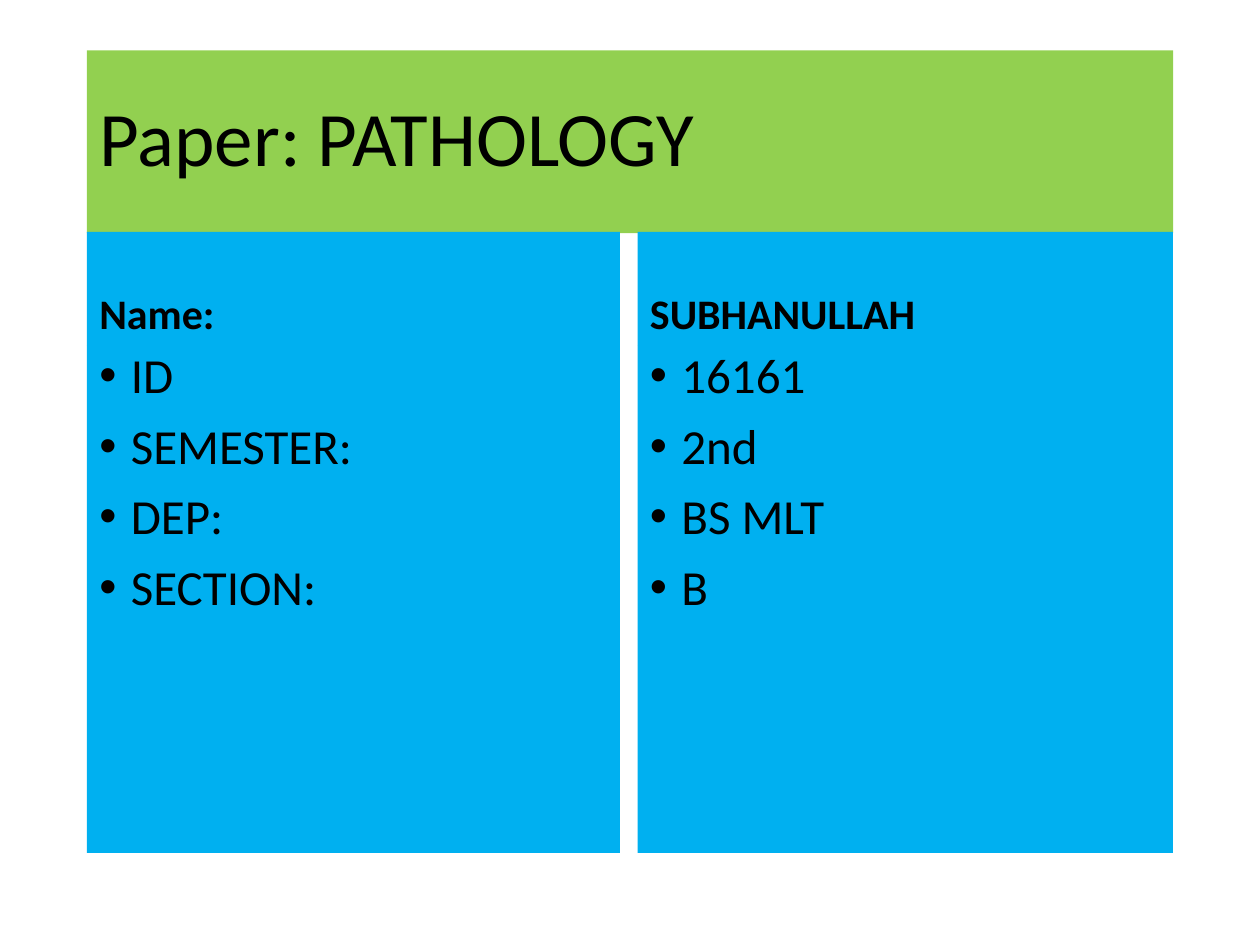
from dataclasses import dataclass

from lxml.etree import SubElement
from pptx import Presentation
from pptx.dml.color import RGBColor
from pptx.enum.text import MSO_ANCHOR as Anchor, MSO_AUTO_SIZE as AutoSize, PP_ALIGN as Align
from pptx.oxml.ns import qn
from pptx.util import Inches, Pt

FONT = "Calibri"
BLACK, GREEN, BLUE = "000000", "92D050", "00B0F0"
LEFT, RIGHT = 0.69, 9.31
TITLE_TOP, TITLE_HEIGHT = 0.4, 1.45
HEADING_TOP, LIST_TOP, BOTTOM = 1.84, 2.74, 6.77
INDENT = 0.25


@dataclass
class Column:
    left: float
    right: float
    heading: str
    items: list[str]


COLUMNS = [
    Column(LEFT, 4.92, "Name:", ["ID", "SEMESTER:", "DEP:", "SECTION:"]),
    Column(5.06, RIGHT, "SUBHANULLAH", ["16161", "2nd", "BS MLT", "B"]),
]


def color(value: str) -> RGBColor:
    return RGBColor.from_string(value)


def add_bullet(paragraph) -> None:
    properties = paragraph._p.get_or_add_pPr()
    properties.set("marL", str(Inches(INDENT)))
    properties.set("indent", str(-Inches(INDENT)))
    SubElement(properties, qn("a:buFont")).set("typeface", "Arial")
    SubElement(properties, qn("a:buChar")).set("char", "•")


def fill_panel(shape, lines: list[str], background: str, size: int, anchor: Anchor,
               bold: bool = False, bulleted: bool = False) -> None:
    shape.fill.solid()
    shape.fill.fore_color.rgb = color(background)
    frame = shape.text_frame
    frame.text = "\n".join(lines)
    frame.word_wrap = True
    frame.auto_size = AutoSize.NONE
    frame.vertical_anchor = anchor
    for index, paragraph in enumerate(frame.paragraphs):
        if bulleted:
            add_bullet(paragraph)
        paragraph.alignment = Align.LEFT
        paragraph.line_spacing = 0.9
        paragraph.space_before = Pt(10 if index else 0)
        paragraph.font.name = FONT
        paragraph.font.size = Pt(size)
        paragraph.font.bold = bold
        paragraph.font.color.rgb = color(BLACK)


def add_panel(slide, column: Column, top: float, bottom: float):
    return slide.shapes.add_textbox(Inches(column.left), Inches(top),
                                    Inches(column.right - column.left), Inches(bottom - top))


def add_column(slide, column: Column) -> None:
    heading = add_panel(slide, column, HEADING_TOP, LIST_TOP)
    fill_panel(heading, [column.heading], BLUE, 24, Anchor.BOTTOM, bold=True)
    details = add_panel(slide, column, LIST_TOP, BOTTOM)
    fill_panel(details, column.items, BLUE, 28, Anchor.TOP, bulleted=True)


def main() -> None:
    presentation = Presentation()
    presentation.slide_width, presentation.slide_height = Inches(10), Inches(7.5)
    slide = presentation.slides.add_slide(presentation.slide_layouts[5])
    title = slide.shapes.title
    title.left, title.top = Inches(LEFT), Inches(TITLE_TOP)
    title.width, title.height = Inches(RIGHT - LEFT), Inches(TITLE_HEIGHT)
    fill_panel(title, ["Paper: PATHOLOGY"], GREEN, 44, Anchor.MIDDLE)
    for column in COLUMNS:
        add_column(slide, column)
    presentation.save("out.pptx")


if __name__ == "__main__":
    main()
